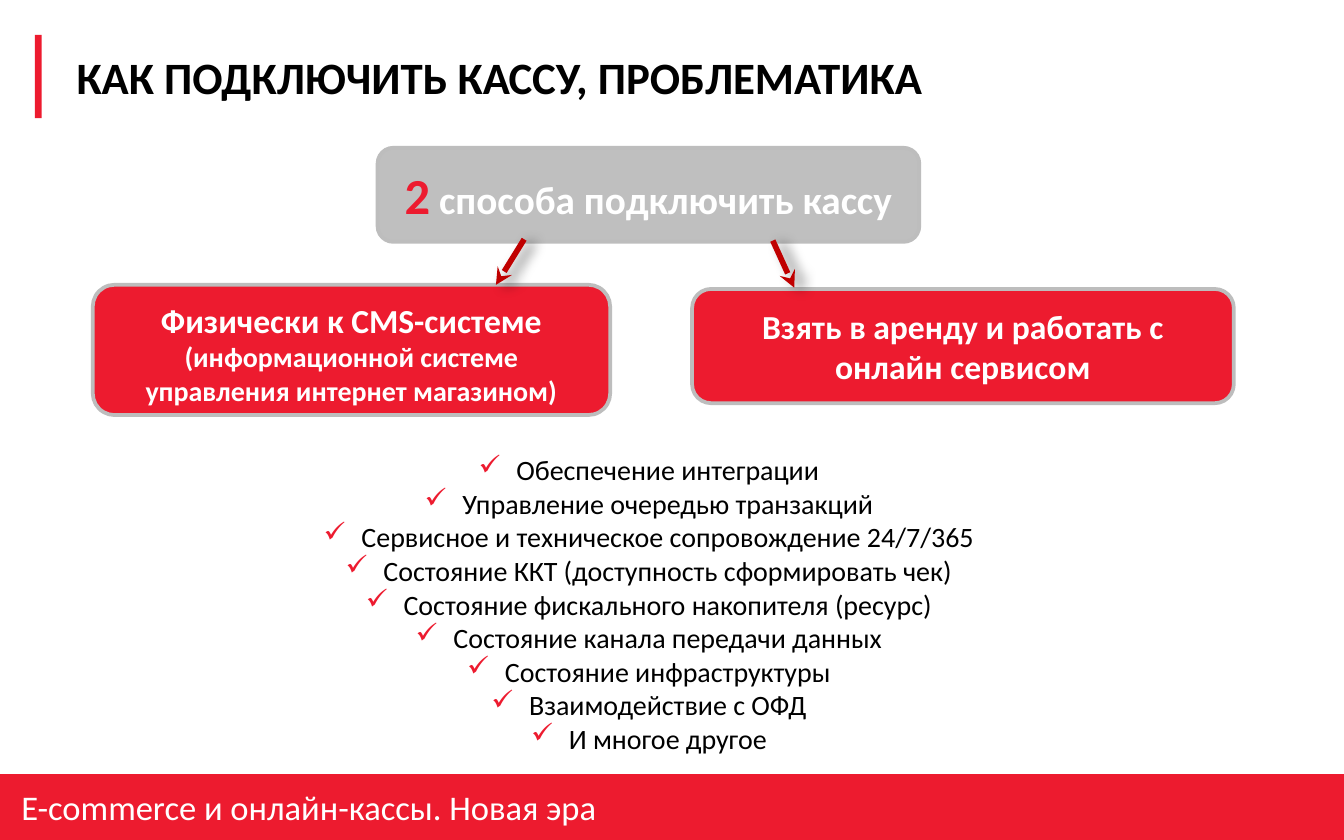
from dataclasses import dataclass

from lxml.etree import SubElement
from pptx import Presentation
from pptx.dml.color import RGBColor
from pptx.enum.shapes import MSO_CONNECTOR, MSO_SHAPE
from pptx.enum.text import MSO_ANCHOR, MSO_AUTO_SIZE, PP_ALIGN
from pptx.oxml.ns import qn
from pptx.util import Pt

FONT = "Calibri"
COLORS = {
    "red": "ED1B2F",
    "arrow": "C00000",
    "gray": "BFBFBF",
    "border": "BDBDBD",
    "white": "FFFFFF",
    "black": "000000",
}


@dataclass
class Run:
    text: str
    size: float
    color: str = "white"


@dataclass
class Card:
    box: tuple[float, float, float, float]
    fill: str
    runs: list[Run]
    top_inset: float = 3.6


@dataclass
class Arrow:
    start: tuple[float, float]
    end: tuple[float, float]


TITLE = "КАК ПОДКЛЮЧИТЬ КАССУ, ПРОБЛЕМАТИКА"
FOOTER = "E-commerce и онлайн-кассы. Новая эра"
CARDS = [
    Card((49.7, 152.6, 277.2, 69.8), "red", [
        Run("Физически к CMS-системе ", 18),
        Run("(информационной системе управления интернет магазином)", 15),
    ], top_inset=7.2),
    Card((370.8, 154.8, 290.2, 61.2), "red", [
        Run("Взять в аренду и работать с онлайн сервисом", 18),
    ]),
    Card((202.3, 79.2, 290.2, 50.4), "gray", [
        Run("2", 27, "red"),
        Run(" способа подключить кассу", 21),
    ]),
]
ARROWS = [
    Arrow((414, 128.9), (425.5, 154.1)),
    Arrow((280.8, 128.2), (265.7, 152.6)),
]
TASKS = [
    "Обеспечение интеграции",
    "Управление очередью транзакций",
    "Сервисное и техническое сопровождение 24/7/365",
    "Состояние ККТ (доступность сформировать чек)",
    "Состояние фискального накопителя (ресурс)",
    "Состояние канала передачи данных",
    "Состояние инфраструктуры",
    "Взаимодействие с ОФД",
    "И многое другое",
]


def rgb(name: str) -> RGBColor:
    return RGBColor.from_string(COLORS[name])


def add_text(p, text: str, *, size: float, color: str = "black",
             bold: bool = False) -> None:
    r = p.add_run()
    r.text = text
    r.font.name = FONT
    r.font.size = Pt(size)
    r.font.bold = bold
    r.font.color.rgb = rgb(color)


def add_block(s, kind, box: tuple, fill: str, border: str | None = None):
    sp = s.shapes.add_shape(kind, *map(Pt, box))
    sp.shadow.inherit = False
    sp.fill.solid()
    sp.fill.fore_color.rgb = rgb(fill)
    if border:
        sp.line.color.rgb = rgb(border)
        sp.line.width = Pt(2)
    else:
        sp.line.fill.background()
    return sp


def add_card(s, card: Card) -> None:
    sp = add_block(s, MSO_SHAPE.ROUNDED_RECTANGLE, card.box, card.fill, "border")
    tf = sp.text_frame
    tf.word_wrap = True
    tf.vertical_anchor = MSO_ANCHOR.MIDDLE
    tf.margin_top = Pt(card.top_inset)
    p = tf.paragraphs[0]
    p.alignment = PP_ALIGN.CENTER
    for run in card.runs:
        add_text(p, run.text, size=run.size, color=run.color, bold=True)


def add_arrow(s, arrow: Arrow) -> None:
    """Draw a line with a stealth head and a soft shadow."""
    cx = s.shapes.add_connector(
        MSO_CONNECTOR.STRAIGHT, *map(Pt, arrow.start + arrow.end))
    cx.line.color.rgb = rgb("arrow")
    cx.line.width = Pt(3)
    SubElement(cx.line._get_or_add_ln(), qn("a:tailEnd"), type="stealth")
    effects = SubElement(cx._element.spPr, qn("a:effectLst"))
    shadow = SubElement(effects, qn("a:outerShdw"), blurRad=str(Pt(7)),
                        dist=str(Pt(5)), dir=str(18 * 60000))
    color = SubElement(shadow, qn("a:srgbClr"), val=COLORS["black"])
    SubElement(color, qn("a:alpha"), val="55000")


def add_check(p) -> None:
    pPr = p._p.get_or_add_pPr()
    pPr.set("marL", str(Pt(20.2)))
    pPr.set("indent", str(-Pt(20.2)))
    SubElement(SubElement(pPr, qn("a:buClr")), qn("a:srgbClr"), val=COLORS["red"])
    SubElement(pPr, qn("a:buChar"), char="✓")


def add_tasks(s) -> None:
    tf = s.shapes.add_textbox(Pt(149), Pt(239), Pt(397.4), Pt(170.6)).text_frame
    tf.word_wrap = True
    for i, task in enumerate(TASKS):
        p = tf.add_paragraph() if i else tf.paragraphs[0]
        p.alignment = PP_ALIGN.CENTER
        add_check(p)
        add_text(p, task, size=15)


def add_title(s) -> None:
    sp = s.shapes.title
    sp.left, sp.top, sp.width, sp.height = map(Pt, (36, 20.9, 534.2, 40.3))
    tf = sp.text_frame
    tf.auto_size = MSO_AUTO_SIZE.NONE
    tf.word_wrap = True
    tf.vertical_anchor = MSO_ANCHOR.MIDDLE
    tf.margin_left = tf.margin_right = Pt(5)
    tf.margin_top = tf.margin_bottom = Pt(2.9)
    p = tf.paragraphs[0]
    p.alignment = PP_ALIGN.LEFT
    add_text(p, TITLE, size=24, bold=True)


def add_footer(s) -> None:
    add_block(s, MSO_SHAPE.RECTANGLE, (0, 414.7, 720, 35.3), "red")
    tf = s.shapes.add_textbox(Pt(4.3), Pt(417.6), Pt(325.4), Pt(29.5)).text_frame
    tf.word_wrap = False
    add_text(tf.paragraphs[0], FOOTER, size=18.5, color="white")


def main() -> None:
    prs = Presentation()
    prs.slide_width, prs.slide_height = Pt(720), Pt(450)
    s = prs.slides.add_slide(prs.slide_layouts[5])
    add_block(s, MSO_SHAPE.RECTANGLE, (18.7, 18.7, 3.6, 44.6), "red")
    add_footer(s)
    add_tasks(s)
    add_title(s)
    for card in CARDS:
        add_card(s, card)
    for arrow in ARROWS:
        add_arrow(s, arrow)
    prs.save("out.pptx")


if __name__ == "__main__":
    main()
